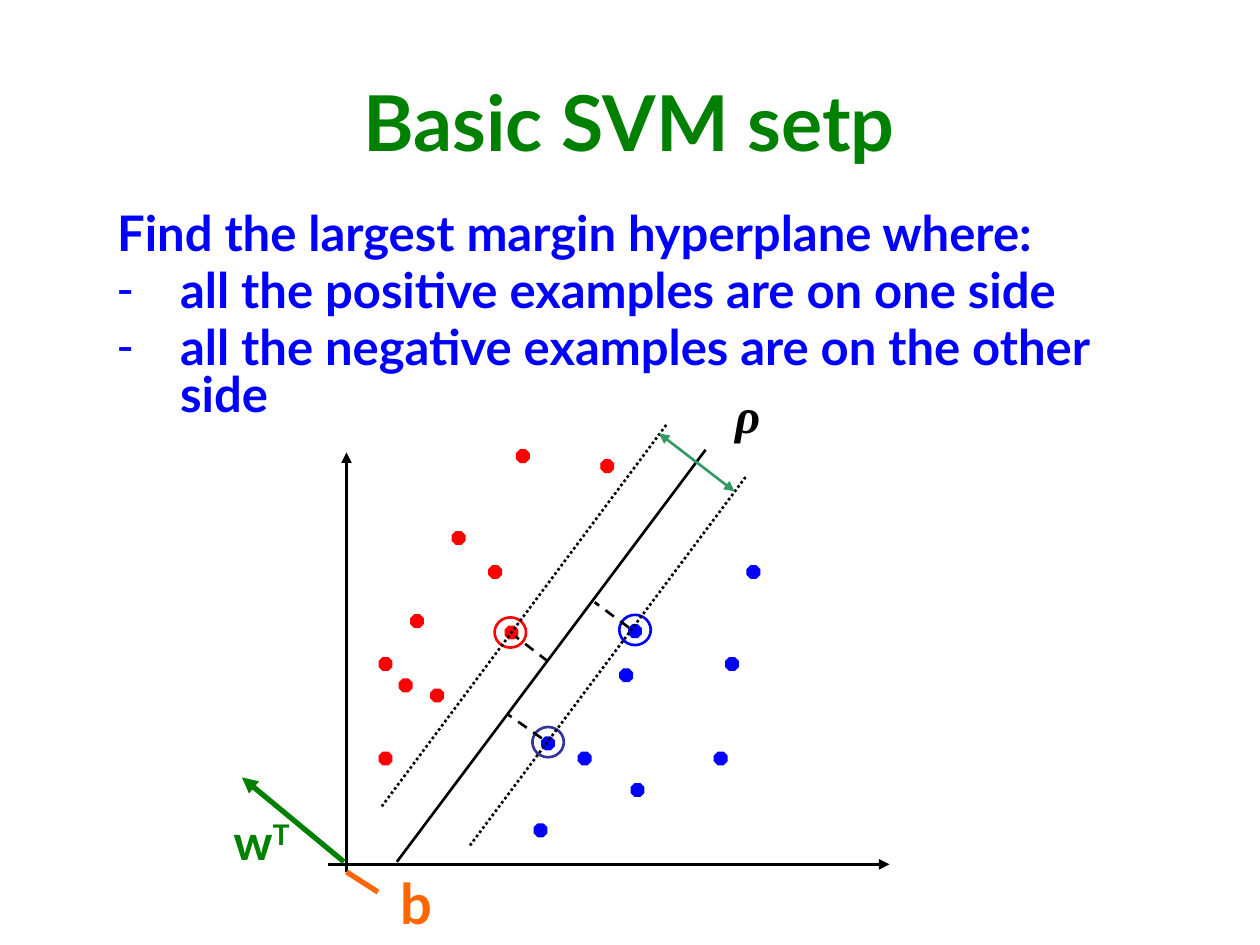
from dataclasses import dataclass

from pptx import Presentation
from pptx.dml.color import RGBColor
from pptx.enum.dml import MSO_LINE
from pptx.enum.shapes import MSO_CONNECTOR, MSO_SHAPE
from pptx.enum.text import MSO_ANCHOR, MSO_AUTO_SIZE, PP_ALIGN
from pptx.oxml.ns import qn
from pptx.util import Inches, Pt
from lxml.etree import SubElement

BLACK = RGBColor(0x00, 0x00, 0x00)
RED = RGBColor(0xFF, 0x00, 0x00)
BLUE = RGBColor(0x00, 0x00, 0xFF)
INDIGO = RGBColor(0x33, 0x33, 0x99)
GREEN = RGBColor(0x00, 0x80, 0x00)
TEAL = RGBColor(0x33, 0x99, 0x66)
ORANGE = RGBColor(0xFF, 0x66, 0x00)

# The slide is a grid of 10 columns by 7.5 rows
CELL = Inches(1)
COLUMNS, ROWS = 10, 7.5
DOT = 0.1
RING = (0.25, 0.24)

# Examples in plot coordinates: x to the right and y up from the origin
POSITIVE = [(1.18, 2.32), (0.56, 1.93), (0.72, 1.34), (0.31, 0.84), (0.89, 2.59),
            (0.31, 1.59), (0.47, 1.42), (1.31, 1.84), (1.40, 3.24), (2.07, 3.16)]
NEGATIVE = [(2.29, 1.85), (1.89, 0.84), (2.97, 0.84), (1.54, 0.27), (2.22, 1.50),
            (1.60, 0.96), (2.31, 0.59), (3.06, 1.59), (3.23, 2.32)]
# Support vector, ring colour, ends of the dash to the hyperplane
SUPPORT = [((1.30, 1.84), RED, (1.60, 1.61), (1.34, 1.81)),
           ((1.60, 0.97), INDIGO, (1.55, 1.00), (1.28, 1.19)),
           ((2.29, 1.86), BLUE, (2.24, 1.88), (1.97, 2.08))]
MARGINS = [((0.98, 0.15), (3.18, 3.09)), ((0.28, 0.46), (2.54, 3.49))]


@dataclass
class Box:
    left: float
    top: float
    width: float
    height: float

    def place(self):
        return [round(v * CELL) for v in (self.left, self.top, self.width, self.height)]

    def at(self, x, y):
        """Grid position of a plot point; the origin is the lower left corner."""
        return self.left + x, self.top + self.height - y

    def around(self, x, y, width, height):
        column, row = self.at(x, y)
        return Box(column - width / 2, row - height / 2, width, height)

    def below(self, x, y, width, height):
        return Box(*self.at(x, y), width, height)


def move(placeholder, box):
    (placeholder.left, placeholder.top,
     placeholder.width, placeholder.height) = box.place()


def add_run(paragraph, text, size, color, font="Lato", italic=None):
    run = paragraph.add_run()
    run.text = text
    run.font.name = font
    run.font.size = Pt(size)
    run.font.bold = True
    run.font.italic = italic
    run.font.color.rgb = color
    return run


def set_spacing(paragraph, before):
    paragraph.line_spacing = 0.8
    paragraph.space_before = Pt(before)


def add_title(slide, box):
    title = slide.shapes.title
    move(title, box)
    title.text_frame.vertical_anchor = MSO_ANCHOR.MIDDLE
    paragraph = title.text_frame.paragraphs[0]
    paragraph.alignment = PP_ALIGN.CENTER
    add_run(paragraph, "Basic SVM setp", 44, GREEN)


def add_goal(slide, box):
    goal = slide.placeholders[1]
    move(goal, box)
    frame = goal.text_frame
    frame.word_wrap = True
    frame.auto_size = MSO_AUTO_SIZE.SHAPE_TO_FIT_TEXT
    lines = [("Find the largest margin hyperplane where:", None),
             ("all the positive examples are on one side", "-"),
             ("all the negative examples are on the other side", "-")]
    for index, (text, bullet) in enumerate(lines):
        paragraph = frame.add_paragraph() if index else frame.paragraphs[0]
        set_spacing(paragraph, 5.6)
        properties = paragraph._p.get_or_add_pPr()
        indent = Inches(0.5) if bullet else 0
        properties.set("marL", str(indent))
        properties.set("indent", str(-indent))
        if bullet:
            SubElement(properties, qn("a:buChar")).set("char", bullet)
        else:
            SubElement(properties, qn("a:buNone"))
        add_run(paragraph, text, 28, BLUE)


def add_line(slide, plot, start, end, color=BLACK, width=1.5, dash=None, arrows=()):
    ends = [round(v * CELL) for v in (*plot.at(*start), *plot.at(*end))]
    connector = slide.shapes.add_connector(MSO_CONNECTOR.STRAIGHT, *ends)
    connector.line.color.rgb = color
    connector.line.width = Pt(width)
    if dash:
        connector.line.dash_style = dash
    outline = connector.line._get_or_add_ln()
    for arrow in arrows:
        SubElement(outline, qn(f"a:{arrow}")).set("type", "triangle")
    SubElement(connector._element.spPr, qn("a:effectLst"))


def add_marker(slide, preset, box, color, width, filled):
    marker = slide.shapes.add_shape(preset, *box.place())
    marker.shadow.inherit = False
    if filled:
        marker.fill.solid()
        marker.fill.fore_color.rgb = color
    else:
        marker.fill.background()
    marker.line.color.rgb = color
    marker.line.width = Pt(width)


def add_label(slide, box, text, size, color, before, wrap=False, **style):
    label = slide.shapes.add_textbox(*box.place())
    label.text_frame.word_wrap = wrap
    label.text_frame.auto_size = MSO_AUTO_SIZE.SHAPE_TO_FIT_TEXT
    paragraph = label.text_frame.paragraphs[0]
    paragraph.alignment = PP_ALIGN.CENTER
    set_spacing(paragraph, before)
    add_run(paragraph, text, size, color, **style)
    return paragraph


def add_plot(slide, plot):
    # Axes
    add_line(slide, plot, (0, -0.06), (0, plot.height), width=2, arrows=["tailEnd"])
    add_line(slide, plot, (-0.15, 0), (plot.width, 0), width=2, arrows=["tailEnd"])

    # Examples of both classes
    for examples, color in ((POSITIVE, RED), (NEGATIVE, BLUE)):
        for example in examples:
            add_marker(slide, MSO_SHAPE.OCTAGON, plot.around(*example, DOT, DOT),
                       color, 0.75, True)

    # Hyperplane, support vectors and margins
    add_line(slide, plot, (0.40, 0.02), (2.85, 3.29))
    for vector, color, start, end in SUPPORT:
        add_marker(slide, MSO_SHAPE.OVAL, plot.around(*vector, *RING), color, 1.5, False)
        add_line(slide, plot, start, end, dash=MSO_LINE.DASH)
    for start, end in MARGINS:
        add_line(slide, plot, start, end, dash=MSO_LINE.ROUND_DOT)

    # Margin width
    add_line(slide, plot, (2.48, 3.42), (3.08, 2.96), TEAL, arrows=["headEnd", "tailEnd"])
    add_label(slide, plot.below(2.56, 3.77, 1.25, 0.5), "ρ", 28, BLACK, 14,
              wrap=True, font="Times New Roman", italic=True)

    # Weight vector
    add_line(slide, plot, (-0.83, 0.69), (-0.02, 0.02), GREEN, 3, arrows=["headEnd"])
    weight = add_label(slide, plot.below(-1.01, 0.38, 0.67, 0.49), "w", 28, GREEN, 5.6)
    transpose = add_run(weight, "T", 28, GREEN)
    transpose.font._element.set("baseline", "30000")

    # Offset
    add_line(slide, plot, (0.25, -0.22), (0, -0.06), ORANGE, 3)
    add_label(slide, plot.below(0.33, -0.09, 0.45, 0.55), "b", 32, ORANGE, 6.4)


def main():
    deck = Presentation()
    deck.slide_width, deck.slide_height = round(COLUMNS * CELL), round(ROWS * CELL)
    slide = deck.slides.add_slide(deck.slide_layouts[1])
    add_title(slide, Box(0.58, 0.42, 8.83, 1.08))
    add_plot(slide, Box(2.75, 3.59, 4.31, 3.27))
    add_goal(slide, Box(0.83, 1.65, 8.38, 1.44))
    deck.save("out.pptx")


if __name__ == "__main__":
    main()
